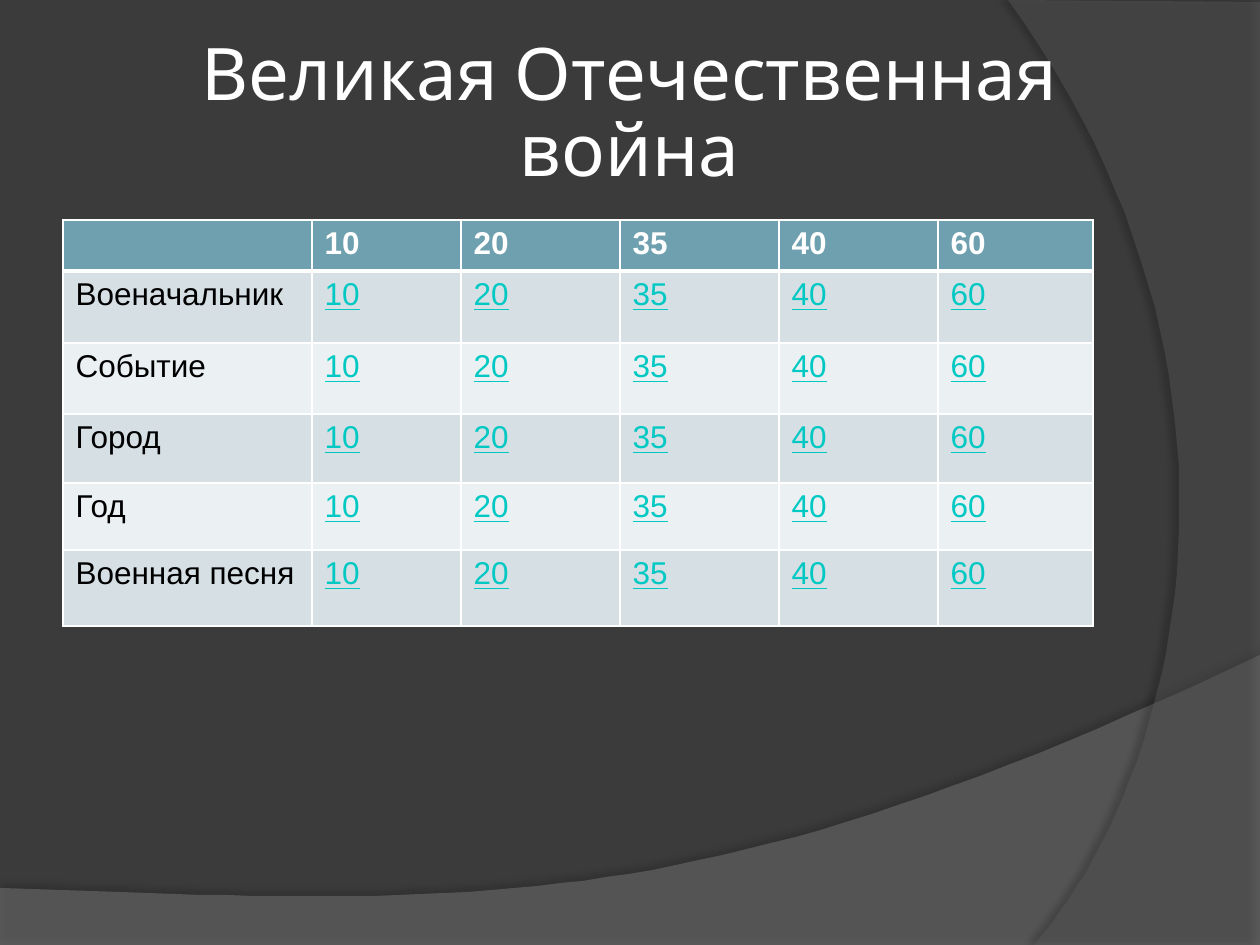
from dataclasses import dataclass

from lxml import etree
from pptx import Presentation
from pptx import util as u
from pptx.dml.color import RGBColor
from pptx.enum import text
from pptx.oxml import ns

SCALE = 914400 / 126  # EMU in one px


@dataclass(frozen=True)
class Theme:
    back: str = "3B3B3B"
    wave: str = "7F7F7F"
    arc: str = "5E5E5E"
    shade: str = "000000"
    light: str = "FFFFFF"
    ink: str = "000000"
    link: str = "00C8C3"
    head: str = "6EA0B0"
    bands: tuple = ("D5DFE4", "EBF0F2")
    title: str = "Karla"
    body: str = "Arial"
    big: float = 41.4
    small: float = 18


def px(n):
    return u.Emu(round(n * SCALE))


def add(parent, tag, **attrs):
    """Append a DrawingML element with the given attributes."""
    item = etree.SubElement(parent, ns.qn("a:" + tag))
    for key, value in attrs.items():
        item.set(key, str(value))
    return item


def write(frame, words, font, size, color, bold=False, line=False,
          align=None, space=None):
    para = frame.paragraphs[0]
    para.alignment = align
    para.line_spacing = space
    run = para.add_run()
    run.text = words
    run.font.name = font
    run.font.size = u.Pt(size)
    run.font.color.rgb = RGBColor.from_string(color)
    run.font.bold = bold
    run.font.underline = line


def curve(a, b, c, d, steps=48):
    """Points along a cubic Bezier curve, both ends included."""
    for i in range(steps + 1):
        t = i / steps
        s = 1 - t
        yield tuple(s**3 * p + 3 * s * s * t * q + 3 * s * t * t * r + t**3 * e
                    for p, q, r, e in zip(a, b, c, d))


class Deck:
    def __init__(self, theme):
        self.theme = theme
        self.show = Presentation()
        self.show.slide_width, self.show.slide_height = px(1260), px(945)
        self.slide = self.show.slides.add_slide(self.show.slide_layouts[5])
        fill = self.slide.background.fill
        fill.solid()
        fill.fore_color.rgb = RGBColor.from_string(theme.back)

    def sweep(self, points, color, alpha, shade, dist, angle):
        """Draw a translucent outline with a soft shadow."""
        first, *rest = points
        build = self.slide.shapes.build_freeform(*first, scale=SCALE)
        build.add_line_segments(rest, close=True)
        shape = build.convert_to_shape()
        shape.line.fill.background()
        shape.fill.solid()
        shape.fill.fore_color.rgb = RGBColor.from_string(color)
        props = shape._element.spPr
        tint = props.find(".//" + ns.qn("a:srgbClr"))
        add(tint, "alpha", val=alpha * 1000)
        cast = add(add(props, "effectLst"), "outerShdw", blurRad=u.Pt(4),
                   dist=u.Pt(dist), dir=angle * 60000, rotWithShape=0)
        tone = add(cast, "srgbClr", val=self.theme.shade)
        add(tone, "alpha", val=shade * 1000)

    def title(self, words, left, top, width, height):
        box = self.slide.shapes.title
        self.slide.shapes._spTree.append(box._element)  # above the sweeps
        box.left, box.top = px(left), px(top)
        box.width, box.height = px(width), px(height)
        frame = box.text_frame
        frame.word_wrap = True
        frame.auto_size = text.MSO_AUTO_SIZE.NONE
        frame.vertical_anchor = text.MSO_ANCHOR.MIDDLE
        frame.margin_left = frame.margin_right = u.Inches(0.05)
        frame.margin_top = frame.margin_bottom = u.Inches(0.05)
        write(frame, words, self.theme.title, self.theme.big,
              self.theme.light, align=text.PP_ALIGN.CENTER, space=0.88)

    def cell(self, cell, words, fill, top=1, base=1, **style):
        props = cell._tc.get_or_add_tcPr()
        for side, width in zip("LRTB", (1, 1, top, base)):
            edge = add(props, "ln" + side, w=u.Pt(width))
            add(add(edge, "solidFill"), "srgbClr", val=self.theme.light)
        cell.fill.solid()
        cell.fill.fore_color.rgb = RGBColor.from_string(fill)
        if words:
            write(cell.text_frame, words, self.theme.body,
                  self.theme.small, **style)

    def table(self, heads, names, left, top, cols, rows):
        look = self.theme
        grid = self.slide.shapes.add_table(
            len(rows), len(cols), px(left), px(top),
            px(sum(cols)), px(sum(rows))).table
        grid.horz_banding = False
        for col, width in zip(grid.columns, cols):
            col.width = px(width)
        for row, height in zip(grid.rows, rows):
            row.height = px(height)
        # Header row
        for c, head in enumerate(["", *heads]):
            self.cell(grid.cell(0, c), head, look.head, base=3,
                      color=look.light, bold=True)
        # Category rows with their scores
        for r, name in enumerate(names, 1):
            for c, words in enumerate([name, *heads]):
                self.cell(grid.cell(r, c), words, look.bands[(r - 1) % 2],
                          top=3 if r == 1 else 1,
                          color=look.link if c else look.ink, line=c > 0)

    def save(self):
        self.show.save("out.pptx")


def main():
    theme = Theme()
    deck = Deck(theme)

    # Background sweeps
    wave = curve((1260, 655), (704, 919), (493, 906), (0, 888))
    deck.sweep([(0, 945), (1260, 945), *wave], theme.wave, 45, 35, 3.5, 270)
    arc = curve((1034, 945), (1178, 780), (1283, 378), (1008, 0))
    deck.sweep([(1260, 2), (1260, 945), *arc], theme.arc, 40, 45, 4, 180)

    # Title
    deck.title("Великая Отечественная война", 115, 37, 1029, 157)

    # Score board
    deck.table(
        ["10", "20", "35", "40", "60"],
        ["Военачальник", "Событие", "Город", "Год", "Военная песня"],
        63, 220, [249, 149, 159, 159, 159, 155], [51, 72, 71, 69, 67, 76])
    deck.save()


if __name__ == "__main__":
    main()
